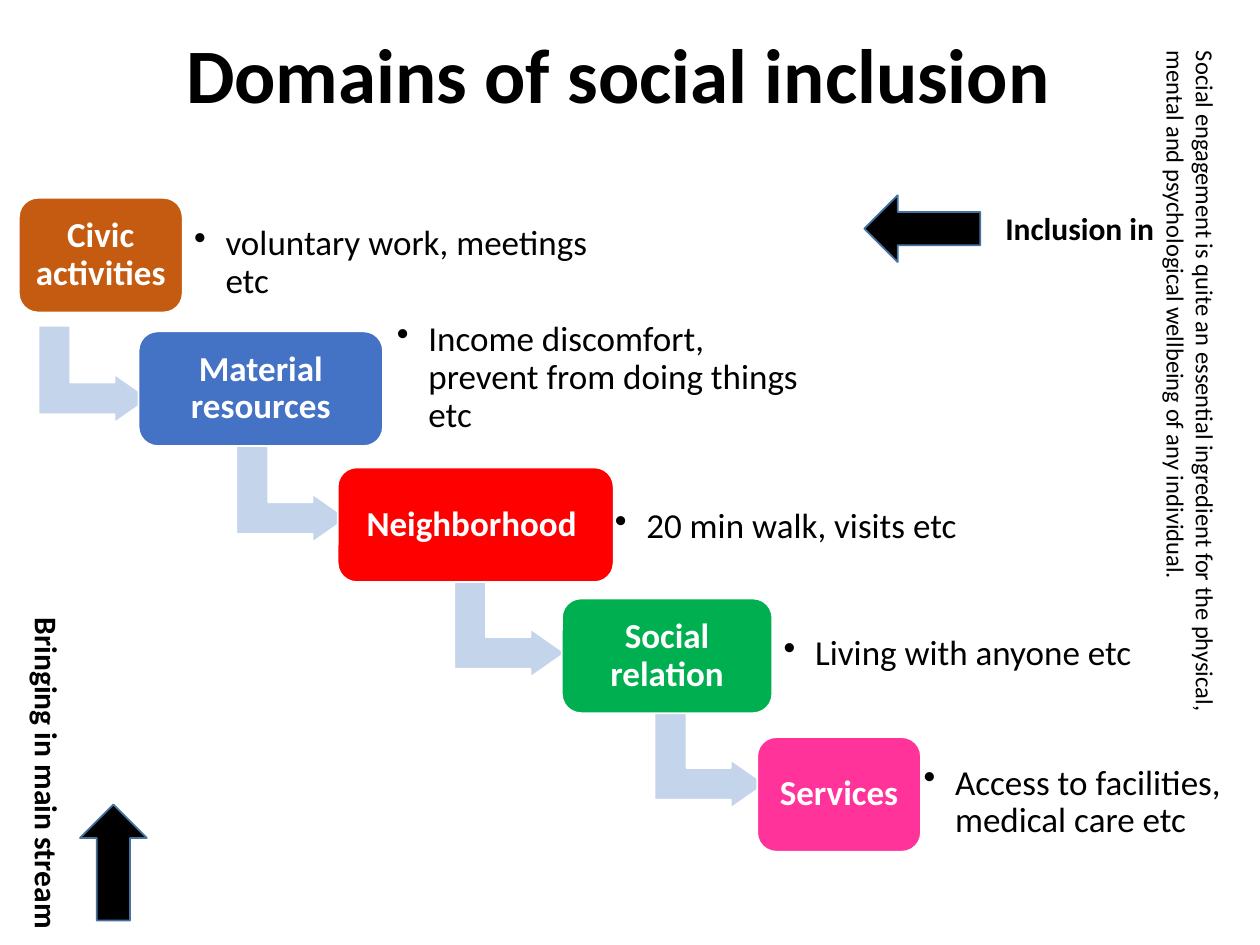
import dataclasses

import pptx
import pptx.dml.color
import pptx.enum.shapes
import pptx.enum.text
import pptx.oxml.ns
import pptx.util
from lxml import etree

SHAPE = pptx.enum.shapes.MSO_SHAPE
ALIGN = pptx.enum.text.PP_ALIGN
ANCHOR = pptx.enum.text.MSO_ANCHOR
FIT = pptx.enum.text.MSO_AUTO_SIZE
PX = 9144  # EMU per px, 100 px to the inch


@dataclasses.dataclass(frozen=True)
class Theme:
    font: str = "Calibri"
    ink: str = "000000"
    paper: str = "FFFFFF"
    step_arrow: str = "C4D5EB"
    outline: str = "43739E"
    title: int = 44
    body: int = 20
    caption: int = 18
    note: int = 14


def rgb(value):
    return pptx.dml.color.RGBColor.from_string(value)


class Deck:
    def __init__(self, prs, theme):
        self.theme = theme
        self.s = prs.slides.add_slide(prs.slide_layouts[5])

    def run(self, p, text, size, color=None, bold=False):
        r = p.add_run()
        r.text = text
        r.font.name = self.theme.font
        r.font.size = pptx.util.Pt(size)
        r.font.bold = bold
        r.font.color.rgb = rgb(color or self.theme.ink)

    def title(self, text, x, y, w, h):
        sp = self.s.shapes.title
        sp.left, sp.top, sp.width, sp.height = (v * PX for v in (x, y, w, h))
        tf = sp.text_frame
        tf.vertical_anchor = ANCHOR.MIDDLE
        tf.auto_size = FIT.NONE
        p = tf.paragraphs[0]
        p.alignment = ALIGN.CENTER
        p.line_spacing = 0.9
        self.run(p, text, self.theme.title, bold=True)

    def shape(self, kind, x, y, w, h, fill, line, rotation=0, adjust=()):
        sp = self.s.shapes.add_shape(kind, x * PX, y * PX, w * PX, h * PX)
        sp.shadow.inherit = False
        sp.rotation = rotation
        for i, value in enumerate(adjust):
            sp.adjustments[i] = value
        sp.fill.solid()
        sp.fill.fore_color.rgb = rgb(fill)
        sp.line.color.rgb = rgb(line)
        sp.line.width = pptx.util.Pt(1)
        return sp

    def frame(self, sp):
        """Middle-anchored wrapped text with even insets; gives its paragraph."""
        tf = sp.text_frame
        tf.word_wrap = True
        tf.vertical_anchor = ANCHOR.MIDDLE
        tf.margin_left = tf.margin_right = tf.margin_top = tf.margin_bottom = 8 * PX
        p = tf.paragraphs[0]
        p.line_spacing = 0.9
        return p

    def step_box(self, text, x, y, w, h, fill):
        sp = self.shape(SHAPE.ROUNDED_RECTANGLE, x, y, w, h, fill,
                        self.theme.paper, adjust=(0.167,))
        p = self.frame(sp)
        p.alignment = ALIGN.CENTER
        self.run(p, text, self.theme.body, self.theme.paper, bold=True)

    def step_arrow(self, x, y):
        self.shape(SHAPE.BENT_UP_ARROW, x, y, 77, 88, self.theme.step_arrow,
                   self.theme.paper, 90, (0.328, 0.25, 0.358))

    def block_arrow(self, x, y, rotation=0):
        self.shape(SHAPE.LEFT_ARROW, x, y, 92, 53, self.theme.ink,
                   self.theme.outline, rotation)

    def textbox(self, x, y, w, h):
        return self.s.shapes.add_textbox(x * PX, y * PX, w * PX, h * PX)

    def bullet(self, text, x, y, w, h):
        p = self.frame(self.textbox(x, y, w, h))
        pPr = p._p.get_or_add_pPr()
        pPr.set("marL", str(25 * PX))
        pPr.set("indent", str(-25 * PX))
        etree.SubElement(pPr, pptx.oxml.ns.qn("a:buChar")).set("char", "•")
        self.run(p, text, self.theme.body)

    def caption(self, text, x, y, w, h, size, bold=True, wrap=False, rotation=0):
        sp = self.textbox(x, y, w, h)
        sp.rotation = rotation
        tf = sp.text_frame
        tf.word_wrap = wrap
        tf.auto_size = FIT.SHAPE_TO_FIT_TEXT
        self.run(tf.paragraphs[0], text, size, bold=bold)


# Label, fill, box (left, top, width), example, example frame
STEPS = [
    ("Civic activities", "C55A11", (15, 157, 130),
     "voluntary work, meetings etc", (146, 172, 351, 74)),
    ("Material resources", "4472C4", (110, 263, 194),
     "Income discomfort, prevent from doing things etc", (307, 263, 338, 74)),
    ("Neighborhood ", "FF0000", (268, 371, 219),
     "20 min walk, visits etc", (480, 399, 308, 39)),
    ("Social relation", "00B050", (446, 475, 167),
     "Living with anyone etc", (614, 496, 327, 47)),
    ("Services", "FF3399", (601, 585, 130),
     "Access to facilities, medical care etc", (725, 604, 258, 66)),
]
STEP_ARROWS = [(36, 253), (193, 348), (366, 455), (525, 559)]


def main():
    prs = pptx.Presentation()
    prs.slide_width, prs.slide_height = 1000 * PX, 750 * PX
    theme = Theme()
    deck = Deck(prs, theme)

    deck.title("Domains of social inclusion ", 67, 15, 862, 94)

    # Staircase: each box covers the tip of the arrow leading to it
    for i, (label, fill, (x, y, w), example, place) in enumerate(STEPS):
        if i < len(STEP_ARROWS):
            deck.step_arrow(*STEP_ARROWS[i])
        deck.step_box(label, x, y, w, 91, fill)
        deck.bullet(example, *place)

    # Black arrows and captions around the staircase
    deck.block_arrow(686, 155)
    deck.caption("Social engagement is quite an essential ingredient for the physical, "
                 "mental and psychological wellbeing of any individual.",
                 659, 288, 572, 57, theme.note, bold=False, wrap=True, rotation=90)
    deck.block_arrow(44, 658, 90)
    deck.caption("Bringing in main stream", -97, 595, 269, 40, theme.caption, rotation=90)
    deck.caption("Inclusion in", 788, 161, 139, 40, theme.caption)

    prs.save("out.pptx")


if __name__ == "__main__":
    main()
